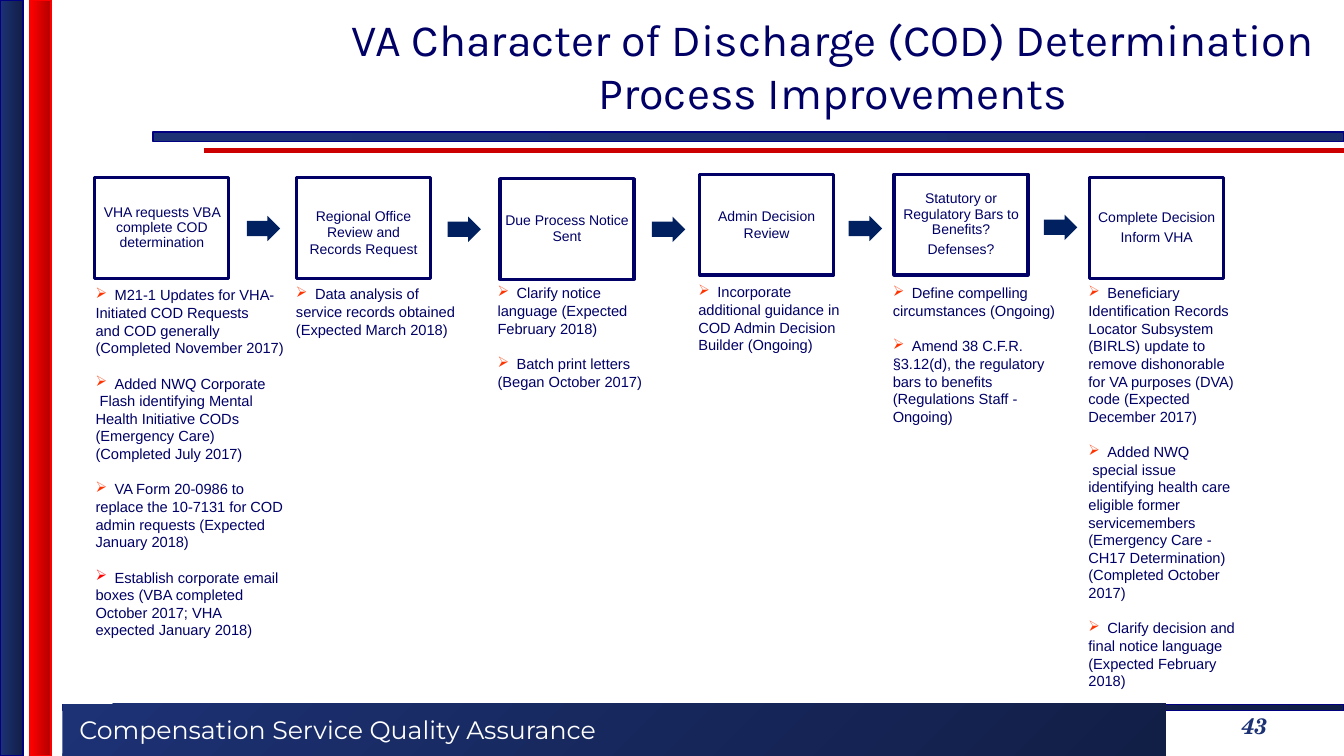
from lxml import etree
from pptx import Presentation
from pptx.dml.color import RGBColor
from pptx.enum.shapes import MSO_CONNECTOR, MSO_SHAPE
from pptx.enum.text import MSO_ANCHOR, MSO_AUTO_SIZE, PP_ALIGN
from pptx.oxml.ns import qn
from pptx.util import Cm, Pt

RECTANGLE, RIGHT_ARROW = MSO_SHAPE.RECTANGLE, MSO_SHAPE.RIGHT_ARROW
STRAIGHT = MSO_CONNECTOR.STRAIGHT
TOP, MIDDLE = MSO_ANCHOR.TOP, MSO_ANCHOR.MIDDLE
LEFT, CENTER = PP_ALIGN.LEFT, PP_ALIGN.CENTER
NO_AUTOFIT = MSO_AUTO_SIZE.NONE

COLORS = {
    "text": "000066", "white": "FFFFFF", "border": "000080", "arrow": "002060",
    "navy": "1D3275", "navy mid": "1A2D69", "navy dark": "111E46",
    "red": "FF0000", "red dark": "B20000", "rule": "CC0000", "bullet": "FF3300",
}
FONTS = {
    "title": {"name": "Karla", "size": Pt(32), "bold": False},
    "footer": {"name": "Montserrat", "size": Pt(18)},
    "number": {"name": "TeX Gyre Schola", "size": Pt(16), "bold": True, "italic": True},
    "step": {"name": "Arial", "size": Pt(10)},
    "note": {"name": "Arial", "size": Pt(10.5)},
}


def rgb(name):
    return RGBColor.from_string(COLORS[name])


def write_lines(frame, lines, font_key, color, align=LEFT, anchor=TOP):
    """Fill an empty text frame with one paragraph per line and return them."""
    frame.word_wrap = True
    frame.auto_size = NO_AUTOFIT
    frame.vertical_anchor = anchor
    paragraphs = []
    for index, line in enumerate(lines):
        paragraph = frame.paragraphs[0] if index == 0 else frame.add_paragraph()
        paragraph.alignment = align
        run = paragraph.add_run()
        run.text = line
        for attribute, value in FONTS[font_key].items():
            setattr(run.font, attribute, value)
        run.font.color.rgb = rgb(color)
        paragraphs.append(paragraph)
    return paragraphs


presentation = Presentation()
presentation.slide_width, presentation.slide_height = Cm(33.87), Cm(19.05)
slide = presentation.slides.add_slide(presentation.slide_layouts[5])
shapes = slide.shapes

# Frame: header rules, side bars and footer band
red_rule = shapes.add_connector(STRAIGHT, Cm(5.15), Cm(3.79), Cm(33.87), Cm(3.79))
red_rule.line.color.rgb = rgb("rule")
red_rule.line.width = Pt(4)
etree.SubElement(red_rule._element.spPr, qn("a:effectLst"))

bars = [
    # left, top, width, height, first colour, last colour, border, angle
    (1.57, 17.75, 32.3, 0.15, "navy", "navy dark", "border", 0),
    (3.86, 3.33, 30.01, 0.23, "navy", "navy mid", "border", 0),
    (0, 0, 0.58, 19.05, "navy", "navy dark", "border", 0),
    (0.76, 0, 0.53, 19.05, "red", "red dark", "red", 0),
    (1.57, 17.73, 27.81, 1.32, "navy", "navy dark", None, 315),
]
for left, top, width, height, first, last, border, angle in bars:
    bar = shapes.add_shape(RECTANGLE, Cm(left), Cm(top), Cm(width), Cm(height))
    bar.shadow.inherit = False
    bar.fill.gradient()
    bar.fill.gradient_angle = angle
    for stop, color in zip(bar.fill.gradient_stops, (first, last)):
        stop.color.rgb = rgb(color)
    if border:
        bar.line.color.rgb = rgb(border)
        bar.line.width = Pt(1)
    else:
        bar.line.fill.background()

title = shapes.title
title.left, title.top, title.width, title.height = Cm(8.13), Cm(0), Cm(25.73), Cm(3.28)
write_lines(title.text_frame,
            ["VA Character of Discharge (COD) Determination Process Improvements"],
            "title", "text", CENTER, MIDDLE)

footer = shapes.add_textbox(Cm(1.75), Cm(17.88), Cm(20.12), Cm(1.02))
write_lines(footer.text_frame, ["Compensation Service Quality Assurance"], "footer", "white")
page_number = shapes.add_textbox(Cm(29.36), Cm(17.65), Cm(4.52), Cm(1.27))
write_lines(page_number.text_frame, ["43"], "number", "navy", CENTER, MIDDLE)

# Process steps: box (left, top), line spacing, then notes (left, top, width)
steps = [
    {"box": (2.39, 4.47), "spacing": 0.9, "notes": (2.16, 7.09, 5.26),
     "lines": ["VHA requests VBA complete COD determination"],
     "bullets": [
         ["M21-1 Updates for VHA-", "Initiated COD Requests",
          "and COD generally (Completed November 2017)"],
         ["Added NWQ Corporate",
          " Flash identifying Mental Health Initiative CODs (Emergency Care) "
          "(Completed July 2017)"],
         ["VA Form 20-0986 to",
          "replace the 10-7131 for COD admin requests (Expected January 2018)"],
         ["Establish corporate email",
          "boxes (VBA completed October 2017; VHA expected January 2018)"]]},
    {"box": (7.47, 4.47), "spacing": 1.0, "notes": (7.21, 7.06, 4.65),
     "lines": ["Regional Office", "Review and Records Request"],
     "bullets": [["Data analysis of", "service records obtained (Expected March 2018)"]]},
    {"box": (12.6, 4.5), "spacing": 0.9, "notes": (12.29, 7.04, 4.27),
     "lines": ["Due Process Notice Sent"],
     "bullets": [["Clarify notice", "language (Expected February 2018)"],
                 ["Batch print letters", "(Began October 2017)"]]},
    {"box": (17.63, 4.39), "spacing": 1.0, "notes": (17.35, 7.01, 4.27),
     "lines": ["Admin Decision Review"],
     "bullets": [["Incorporate",
                  "additional guidance in COD Admin Decision Builder (Ongoing)"]]},
    {"box": (22.53, 4.39), "spacing": 0.9, "notes": (22.25, 7.04, 4.65),
     "lines": ["Statutory or Regulatory Bars to Benefits?", "Defenses?"],
     "bullets": [["Define compelling", "circumstances (Ongoing)"],
                 ["Amend 38 C.F.R.",
                  "§3.12(d), the regulatory bars to benefits (Regulations Staff - Ongoing)"]]},
    {"box": (27.46, 4.47), "spacing": 0.9, "notes": (27.18, 7.04, 4.27),
     "lines": ["Complete Decision", "Inform VHA"],
     "bullets": [
         ["Beneficiary", "Identification Records Locator Subsystem (BIRLS) update to",
          "remove dishonorable for VA purposes (DVA) code (Expected December 2017)"],
         ["Added NWQ", " special issue",
          "identifying health care eligible former servicemembers "
          "(Emergency Care - CH17 Determination) (Completed October 2017)"],
         ["Clarify decision and", "final notice language (Expected February 2018)"]]},
]
for step in steps:
    left, top = step["box"]
    box = shapes.add_shape(RECTANGLE, Cm(left), Cm(top), Cm(3.38), Cm(2.54))
    box.shadow.inherit = False
    box.fill.solid()
    box.fill.fore_color.rgb = rgb("white")
    box.line.color.rgb = rgb("text")
    box.line.width = Pt(2.25)
    frame = box.text_frame
    for side in ("left", "top", "right", "bottom"):
        setattr(frame, f"margin_{side}", Cm(0.12))
    if step["lines"][0] == "Regional Office":
        frame.margin_top, frame.margin_left, frame.margin_right = Cm(0.35), Cm(0.25), Cm(0.25)
    for paragraph in write_lines(frame, step["lines"], "step", "text", CENTER, MIDDLE):
        paragraph.line_spacing = step["spacing"]
        paragraph.space_after = Pt(3.5 if step["spacing"] < 1 else 0)

    left, top, width = step["notes"]
    notes = shapes.add_textbox(Cm(left), Cm(top), Cm(width), Cm(10.6))
    lines = [line for bullet in step["bullets"] for line in bullet]
    paragraphs = iter(write_lines(notes.text_frame, lines, "note", "text"))
    for index, bullet in enumerate(step["bullets"]):
        for line_index in range(len(bullet)):
            paragraph = next(paragraphs)
            if line_index:
                continue
            properties = paragraph._p.get_or_add_pPr()
            properties.set("marL", str(Cm(0.48)))
            properties.set("indent", str(-Cm(0.48)))
            bullet_color = etree.SubElement(properties, qn("a:buClr"))
            color = "red" if bullet[0].startswith("Establish") else "bullet"
            etree.SubElement(bullet_color, qn("a:srgbClr"), val=COLORS[color])
            etree.SubElement(properties, qn("a:buChar"), char="➢")
            if index:
                paragraph.space_before = Pt(12.6)

for left, top in [(6.22, 5.44), (11.28, 5.46), (16.43, 5.46), (21.39, 5.44), (26.31, 5.41)]:
    arrow = shapes.add_shape(RIGHT_ARROW, Cm(left), Cm(top), Cm(0.84), Cm(0.64))
    arrow.adjustments[0] = 0.6
    arrow.shadow.inherit = False
    arrow.fill.solid()
    arrow.fill.fore_color.rgb = rgb("arrow")
    arrow.line.fill.background()

presentation.save("out.pptx")
